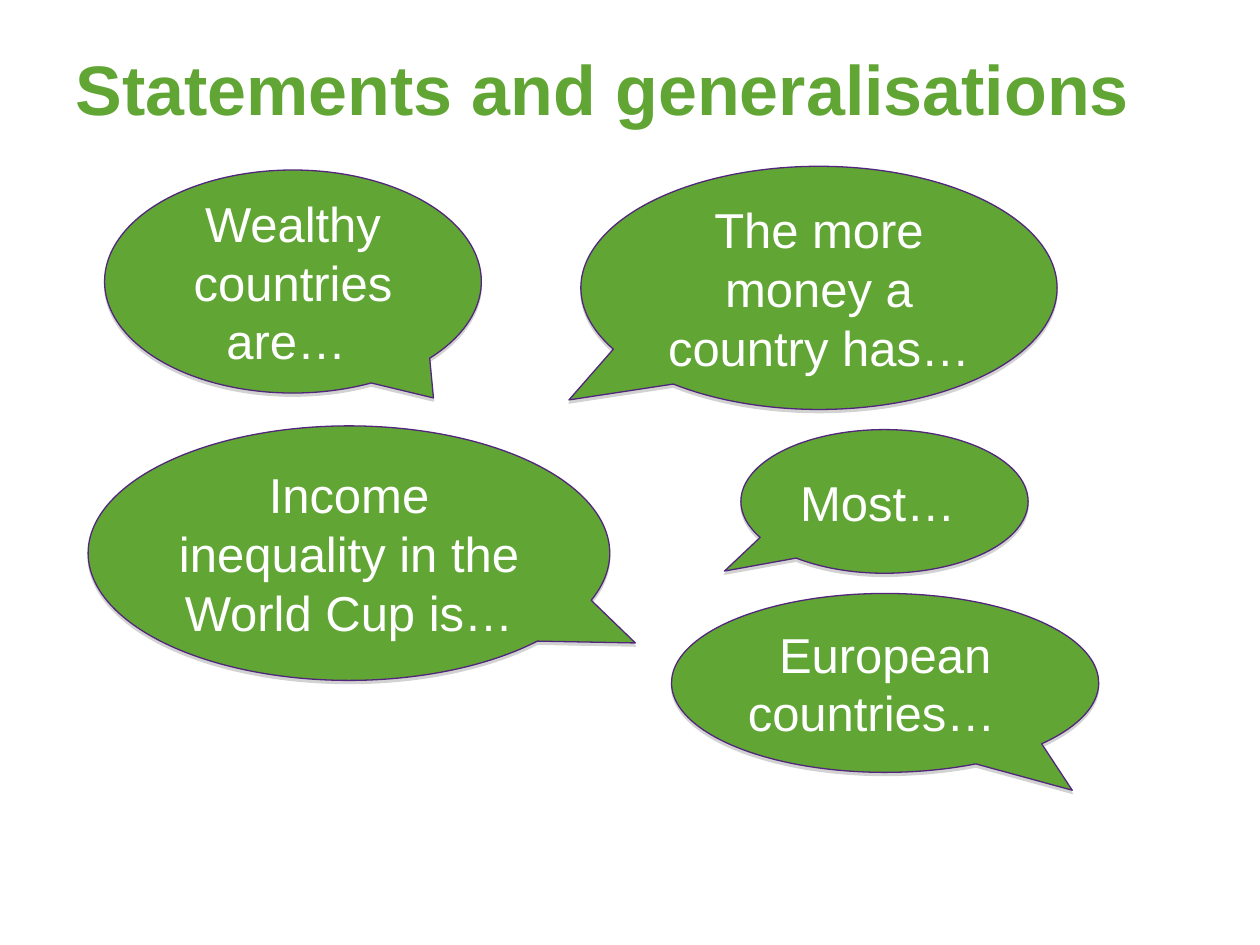
from dataclasses import dataclass

from lxml.etree import SubElement
from pptx import Presentation
from pptx.dml.color import RGBColor
from pptx.enum.shapes import MSO_SHAPE
from pptx.enum.text import MSO_ANCHOR, PP_ALIGN
from pptx.oxml.ns import qn
from pptx.util import Inches, Pt


@dataclass(frozen=True)
class Theme:
    """Colours, font and type sizes of the slide."""
    green: RGBColor = RGBColor(0x61, 0xA5, 0x34)
    purple: RGBColor = RGBColor(0x51, 0x26, 0x7C)
    white: RGBColor = RGBColor(0xFF, 0xFF, 0xFF)
    shadow: str = "808080"
    font: str = "Arial"
    title_size: int = 40
    bubble_size: int = 28


THEME = Theme()

BUBBLES = [
    ("The more money a country has… ", (4.61, 1.32, 3.78, 1.93), (-0.525, 0.461)),
    ("Wealthy countries are… ", (0.83, 1.35, 2.99, 1.77), (0.373, 0.522)),
    ("Income inequality in the World Cup is…", (0.7, 3.38, 4.14, 2.02), (0.549, 0.353)),
    ("Most…  ", (5.88, 3.41, 2.28, 1.14), (-0.557, 0.485)),
    ("European countries…  ", (5.33, 4.71, 3.39, 1.42), (0.438, 0.6)),
]


def write_text(shape, text, size, color, align, bold=False):
    """Fill a shape with one formatted, vertically centred paragraph."""
    frame = shape.text_frame
    frame.word_wrap = True
    frame.vertical_anchor = MSO_ANCHOR.MIDDLE
    para = frame.paragraphs[0]
    para.alignment = align
    span = para.add_run()
    span.text = text
    span.font.name = THEME.font
    span.font.size = Pt(size)
    span.font.bold = bold
    span.font.color.rgb = color


def add_shadow(shape):
    """Give a shape a soft grey shadow straight below it."""
    shape.shadow.inherit = False
    effects = shape._element.spPr.find(qn("a:effectLst"))
    outer = SubElement(effects, qn("a:outerShdw"), blurRad="0", dist=str(Pt(1.8)),
                       dir="5400000", algn="ctr", rotWithShape="0")
    color = SubElement(outer, qn("a:srgbClr"), val=THEME.shadow)
    SubElement(color, qn("a:alpha"), val="35000")


def set_title(page, text):
    """Place and write the slide title."""
    title = page.shapes.title
    title.left, title.top = Inches(0.5), Inches(0.3)
    title.width, title.height = Inches(9), Inches(0.79)
    write_text(title, text, THEME.title_size, THEME.green, PP_ALIGN.LEFT, bold=True)


def add_bubble(page, text, bounds, tail):
    """Add a speech bubble whose tail tip is relative to its centre."""
    bubble = page.shapes.add_shape(MSO_SHAPE.OVAL_CALLOUT, *map(Inches, bounds))
    bubble.adjustments[0], bubble.adjustments[1] = tail
    bubble.fill.solid()
    bubble.fill.fore_color.rgb = THEME.green
    bubble.line.color.rgb = THEME.purple
    bubble.line.width = Pt(0.75)
    add_shadow(bubble)
    write_text(bubble, text, THEME.bubble_size, THEME.white, PP_ALIGN.CENTER)


def main():
    """Build the slide and save the deck."""
    deck = Presentation()
    deck.slide_width, deck.slide_height = Inches(10), Inches(7.5)
    page = deck.slides.add_slide(deck.slide_layouts[5])
    page.background.fill.solid()
    page.background.fill.fore_color.rgb = THEME.white
    set_title(page, "Statements and generalisations")
    for text, bounds, tail in BUBBLES:
        add_bubble(page, text, bounds, tail)
    deck.save("out.pptx")


if __name__ == "__main__":
    main()
